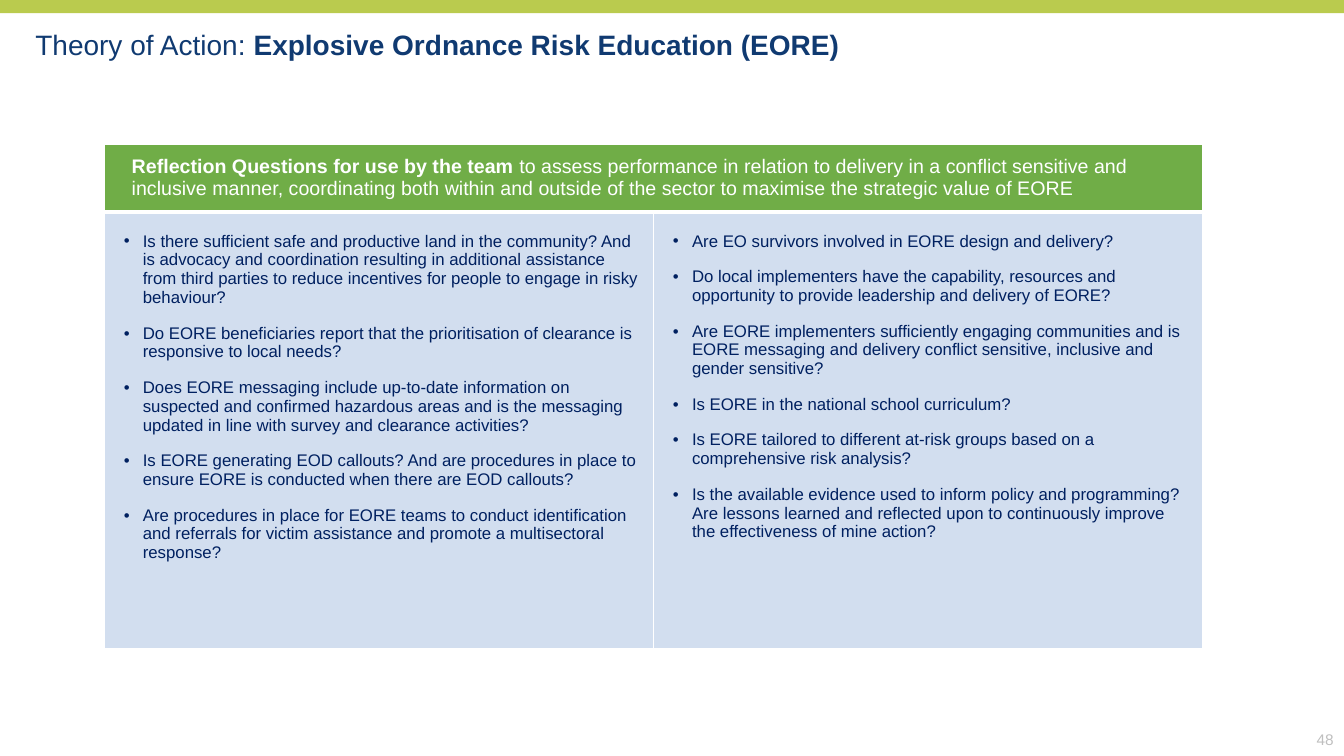
from lxml import etree
from pptx import Presentation
from pptx import util as u
from pptx.dml.color import RGBColor
from pptx.enum import shapes, text
from pptx.oxml.ns import qn

FONT = "Arial"
NAVY, INK, WHITE, GREY = "103A71", "002060", "FFFFFF", "BFBFBF"
LIME, GREEN, PALE_BLUE = "BACB4E", "70AD47", "D2DEEF"

TITLE = ("Theory of Action: ", "Explosive Ordnance Risk Education (EORE)")
HEADING = (
    "Reflection Questions for use by the team ",
    "to assess performance in relation to delivery in a conflict sensitive and inclusive manner, "
    "coordinating both within and outside of the sector to maximise the strategic value of EORE",
)
QUESTIONS = [
    [
        "Is there sufficient safe and productive land in the community? And is advocacy and "
        "coordination resulting in additional assistance from third parties to reduce incentives "
        "for people to engage in risky behaviour?",
        "Do EORE beneficiaries report that the prioritisation of clearance is responsive to local needs?",
        "Does EORE messaging include up-to-date information on suspected and confirmed hazardous "
        "areas and is the messaging updated in line with survey and clearance activities?",
        "Is EORE generating EOD callouts? And are procedures in place to ensure EORE is conducted "
        "when there are EOD callouts?",
        "Are procedures in place for EORE teams to conduct identification and referrals for victim "
        "assistance and promote a multisectoral response?",
    ],
    [
        "Are EO survivors involved in EORE design and delivery?",
        "Do local implementers have the capability, resources and opportunity to provide leadership "
        "and delivery of EORE?",
        "Are EORE implementers sufficiently engaging communities and is EORE messaging and delivery "
        "conflict sensitive, inclusive and gender sensitive?",
        "Is EORE in the national school curriculum?",
        "Is EORE tailored to different at-risk groups based on a comprehensive risk analysis?",
        "Is the available evidence used to inform policy and programming? Are lessons learned and "
        "reflected upon to continuously improve the effectiveness of mine action?",
    ],
]


def rgb(value):
    return RGBColor.from_string(value)


def add_words(paragraph, words, size, color, bold=False):
    run = paragraph.add_run()
    run.text = words
    run.font.name, run.font.size, run.font.bold = FONT, u.Pt(size), bold
    run.font.color.rgb = rgb(color)


def set_margins(holder, left, top, right, bottom):
    holder.margin_left, holder.margin_top = u.Cm(left), u.Cm(top)
    holder.margin_right, holder.margin_bottom = u.Cm(right), u.Cm(bottom)


def set_bullet(paragraph, indent):
    props = paragraph._p.get_or_add_pPr()
    props.set("marL", str(u.Cm(indent)))
    props.set("indent", str(-u.Cm(indent)))
    etree.SubElement(props, qn("a:buFont")).set("typeface", FONT)
    etree.SubElement(props, qn("a:buChar")).set("char", "•")


def style_cell(cell, fill, bottom=1):
    props = cell._tc.get_or_add_tcPr()
    for side, width in (("L", 1), ("R", 1), ("T", 1), ("B", bottom)):
        border = etree.SubElement(props, qn("a:ln" + side), w=str(u.Pt(width)))
        solid = etree.SubElement(border, qn("a:solidFill"))
        etree.SubElement(solid, qn("a:srgbClr"), val=WHITE)
    cell.fill.solid()
    cell.fill.fore_color.rgb = rgb(fill)


# Lime band along the top edge
def add_band(slide, left, top, width, height):
    band = slide.shapes.add_shape(shapes.MSO_SHAPE.RECTANGLE, left, top, width, height)
    band.shadow.inherit = False
    band.fill.solid()
    band.fill.fore_color.rgb = rgb(LIME)
    band.line.fill.background()


# Title, with the topic in bold
def add_title(slide, left, top, width, height):
    title = slide.shapes.title
    title.left, title.top, title.width, title.height = left, top, width, height
    frame = title.text_frame
    set_margins(frame, 0, 0, 0, 0)
    frame.word_wrap = True
    frame.auto_size = text.MSO_AUTO_SIZE.NONE
    frame.vertical_anchor = text.MSO_ANCHOR.TOP
    line = frame.paragraphs[0]
    line.alignment = text.PP_ALIGN.LEFT
    for words, bold in zip(TITLE, (False, True)):
        add_words(line, words, 20, NAVY, bold)


# Reflection questions: a heading across two columns of bullets
def add_questions(slide, left, top, width, height):
    table = slide.shapes.add_table(2, len(QUESTIONS), left, top, width, height).table
    table.rows[0].height = u.Cm(1.7)
    table.rows[1].height = height - u.Cm(1.7)

    for cell in table.rows[0].cells:
        style_cell(cell, GREEN, bottom=3)
    heading = table.cell(0, 0)
    heading.merge(table.cell(0, len(QUESTIONS) - 1))
    set_margins(heading, 0.7, 0.3, 0.25, 0.3)
    for words, bold in zip(HEADING, (True, False)):
        add_words(heading.text_frame.paragraphs[0], words, 14, WHITE, bold)

    for cell, questions in zip(table.rows[1].cells, QUESTIONS):
        style_cell(cell, PALE_BLUE)
        set_margins(cell, 0.5, 0.5, 0.25, 0.13)
        frame = cell.text_frame
        for number, question in enumerate(questions):
            paragraph = frame.add_paragraph() if number else frame.paragraphs[0]
            paragraph.space_after = u.Pt(12)
            set_bullet(paragraph, 0.48)
            add_words(paragraph, question, 12, INK)


# Page number in the bottom right corner
def add_page_number(slide, left, top, width, height):
    frame = slide.shapes.add_textbox(left, top, width, height).text_frame
    frame.word_wrap = True
    frame.vertical_anchor = text.MSO_ANCHOR.MIDDLE
    frame.paragraphs[0].alignment = text.PP_ALIGN.RIGHT
    add_words(frame.paragraphs[0], "48", 11, GREY)


def main():
    deck = Presentation()
    deck.slide_width, deck.slide_height = u.Cm(33.87), u.Cm(19.05)
    slide = deck.slides.add_slide(deck.slide_layouts[5])
    add_questions(slide, u.Cm(2.62), u.Cm(3.63), u.Cm(27.68), u.Cm(12.7))
    add_band(slide, 0, 0, deck.slide_width, u.Cm(0.33))
    add_title(slide, u.Cm(0.89), u.Cm(0.69), u.Cm(31.8), u.Cm(0.86))
    add_page_number(slide, u.Cm(32.69), u.Cm(18.21), u.Cm(1.17), u.Cm(0.84))
    deck.save("out.pptx")


if __name__ == "__main__":
    main()
